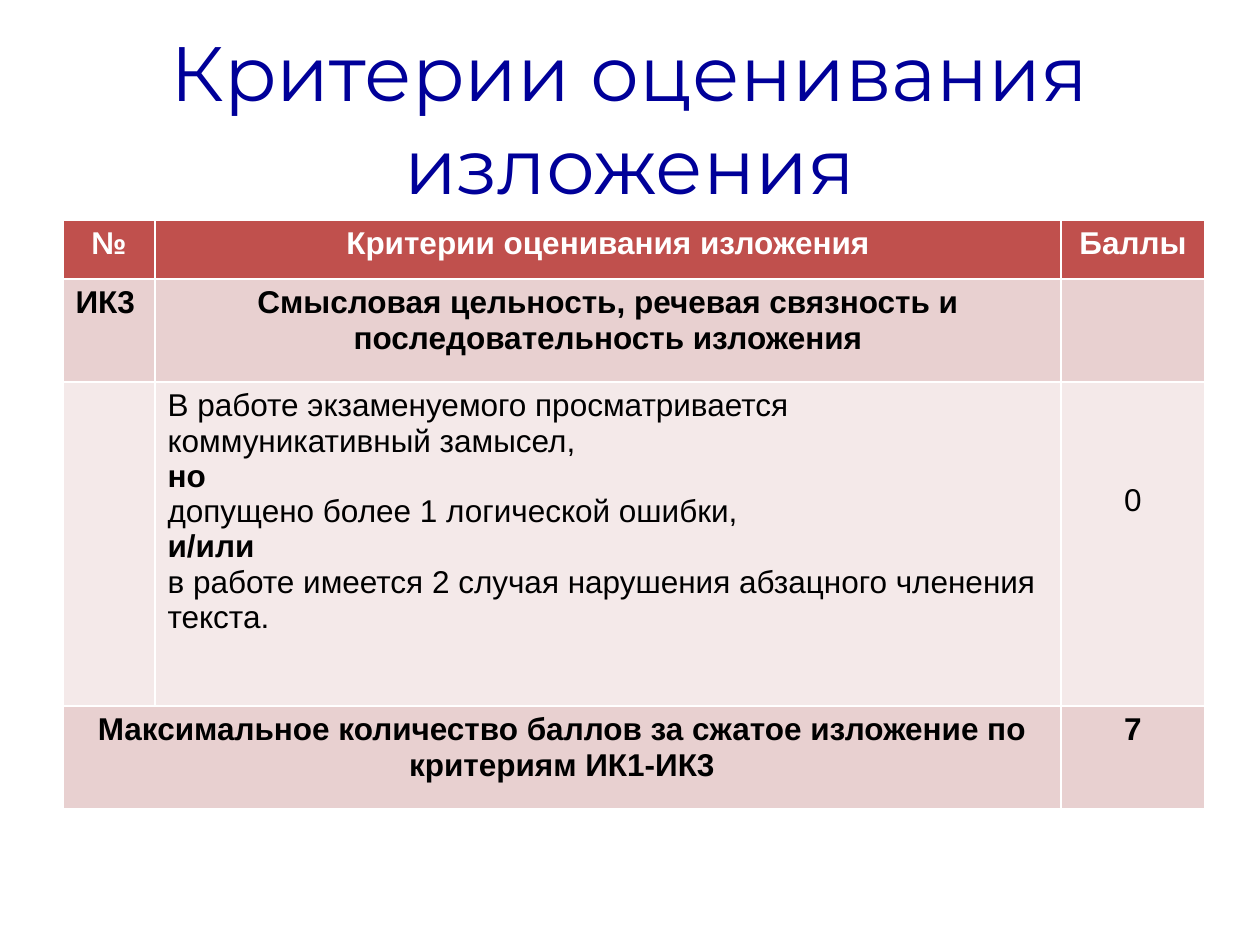
from pptx import Presentation
from pptx import util as u
from pptx.dml.color import RGBColor
from pptx.enum import text

PX = 914400 / 126
NAVY = RGBColor(0x00, 0x00, 0x99)
WHITE = RGBColor(0xFF, 0xFF, 0xFF)
BLACK = RGBColor(0x00, 0x00, 0x00)
RED = RGBColor(0xC0, 0x50, 0x4D)
ROSE = RGBColor(0xE8, 0xD0, 0xD0)
PALE = RGBColor(0xF4, 0xE9, 0xE9)
CENTER = text.PP_ALIGN.CENTER
LEFT = text.PP_ALIGN.LEFT

COLUMNS = (92, 906, 144)
ROWS = (
    (59, RED, WHITE),
    (103, ROSE, BLACK),
    (324, PALE, BLACK),
    (103, ROSE, BLACK),
)
CONTENT = {
    (0, 0): (CENTER, [("№", True)]),
    (0, 1): (CENTER, [("Критерии оценивания изложения", True)]),
    (0, 2): (CENTER, [("Баллы", True)]),
    (1, 0): (LEFT, [("ИК3", True)]),
    (1, 1): (CENTER, [("Смысловая цельность, речевая связность и "
                       "последовательность изложения", True)]),
    (2, 1): (LEFT, [
        ("В работе экзаменуемого просматривается коммуникативный замысел,", False),
        ("но", True),
        ("допущено более 1 логической ошибки,", False),
        ("и/или", True),
        ("в работе имеется 2 случая нарушения абзацного членения текста.", False),
    ]),
    (2, 2): (CENTER, [("0", False)]),
    (3, 0): (CENTER, [("Максимальное количество баллов за сжатое изложение "
                       "по критериям ИК1-ИК3", True)]),
    (3, 2): (CENTER, [("7", True)]),
}


def px(length):
    return u.Emu(round(length * PX))


def add_run(paragraph, words, font_name, size, color, bold=False):
    run = paragraph.add_run()
    run.text = words
    run.font.name = font_name
    run.font.size = u.Pt(size)
    run.font.color.rgb = color
    run.font.bold = bold


def add_title(slide, left, top, width, height):
    frame = slide.shapes.add_textbox(
        px(left), px(top), px(width), px(height)).text_frame
    frame.word_wrap = True
    frame.vertical_anchor = text.MSO_ANCHOR.MIDDLE
    heading = frame.paragraphs[0]
    heading.alignment = CENTER
    add_run(heading, "Критерии оценивания изложения", "Montserrat", 44, NAVY)


def fill_cell(cell, alignment, lines, color):
    for index, (words, bold) in enumerate(lines):
        frame = cell.text_frame
        paragraph = frame.add_paragraph() if index else frame.paragraphs[0]
        paragraph.alignment = alignment
        add_run(paragraph, words, "Arial", 18, color, bold)


def add_criteria(slide, left, top):
    criteria = slide.shapes.add_table(
        len(ROWS), len(COLUMNS), px(left), px(top), px(sum(COLUMNS)),
        px(sum(height for height, _, _ in ROWS))).table
    for column, width in zip(criteria.columns, COLUMNS):
        column.width = px(width)
    for r, (height, background, color) in enumerate(ROWS):
        criteria.rows[r].height = px(height)
        for c in range(len(COLUMNS)):
            cell = criteria.cell(r, c)
            cell.fill.solid()
            cell.fill.fore_color.rgb = background
            if (r, c) in CONTENT:
                alignment, lines = CONTENT[r, c]
                fill_cell(cell, alignment, lines, color)
    criteria.cell(3, 0).merge(criteria.cell(3, 1))
    criteria.cell(2, 2).margin_top = px(101)


def main():
    deck = Presentation()
    deck.slide_width, deck.slide_height = px(1260), px(945)
    slide = deck.slides.add_slide(deck.slide_layouts[6])
    add_title(slide, 63, 38, 1134, 158)
    add_criteria(slide, 63, 220)
    deck.save("out.pptx")


if __name__ == "__main__":
    main()
